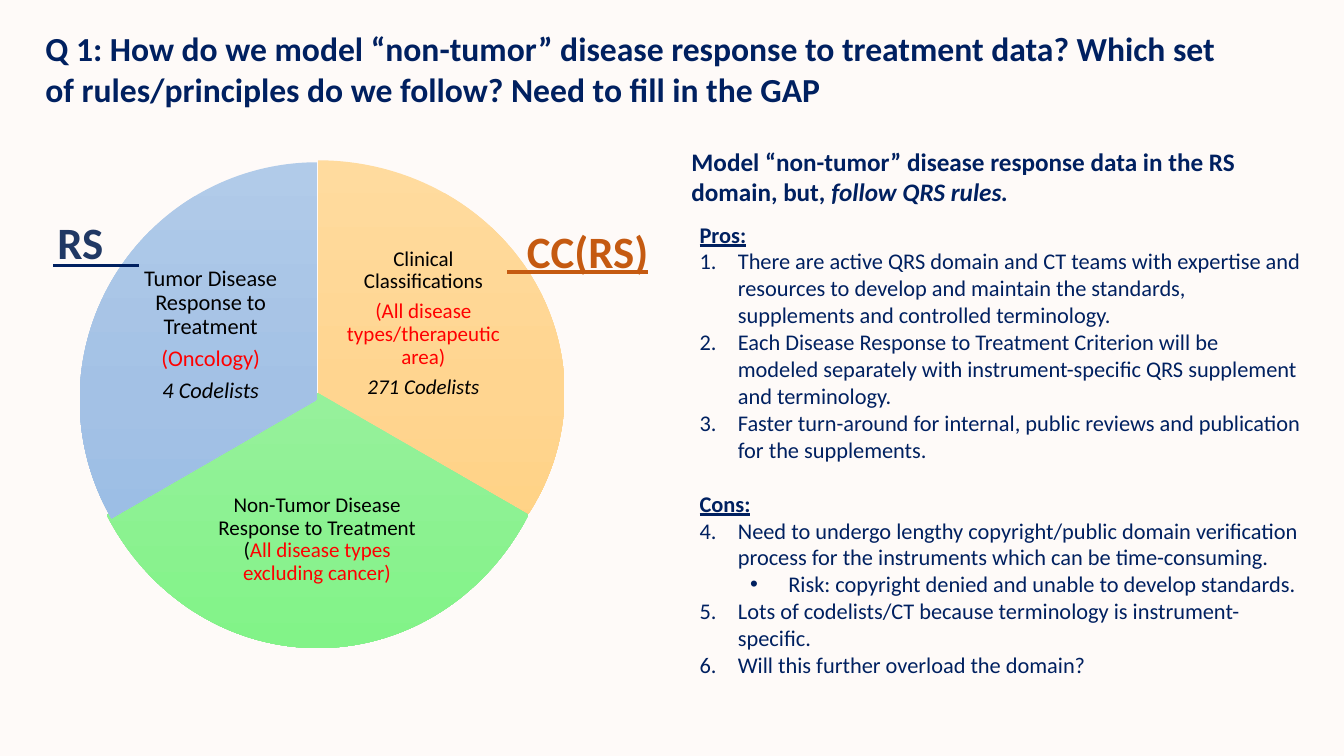
from copy import deepcopy

from lxml import etree
from pptx import Presentation
from pptx.dml.color import RGBColor
from pptx.enum.shapes import MSO_CONNECTOR, MSO_SHAPE
from pptx.enum.text import MSO_ANCHOR, MSO_AUTO_SIZE, PP_ALIGN
from pptx.oxml.ns import qn
from pptx.util import Inches, Pt

PIE, STRAIGHT = MSO_SHAPE.PIE, MSO_CONNECTOR.STRAIGHT
TOP, MIDDLE = MSO_ANCHOR.TOP, MSO_ANCHOR.MIDDLE
LEFT, CENTER, RIGHT = PP_ALIGN.LEFT, PP_ALIGN.CENTER, PP_ALIGN.RIGHT
FONT = "Calibri"
COLORS = {
    "background": "FEFAF8", "navy": "002060", "black": "000000", "red": "FF0000",
    "rs": "203864", "cc": "C55A11",
}

# Content: a paragraph is a list of (text, format) runs
TITLE = ("Q 1: How do we model “non-tumor” disease response to treatment data? "
         "Which set of rules/principles do we follow? Need to fill in the GAP")
SUMMARY = [("Model “non-tumor” disease response data in the RS domain, but, ", {}),
           ("follow QRS rules.", {"italic": True})]
RED, ITALIC = {"color": "red"}, {"italic": True}

# Wedges: box, start and end angle, gradient, label box, label size, label
WEDGES = [
    ((0.71, 1.59, 4.89, 4.61), (270, 30), ("FFDB9E", "FFD590", "FFD07C"),
     (3.37, 2.44, 1.66, 1.54), 15,
     [[("Clinical Classifications", {})],
      [("(All disease types/therapeutic area)", RED)],
      [("271 Codelists", ITALIC)]]),
    ((0.77, 1.37, 4.76, 5.06), (30, 150), ("A4F4A9", "96F19B", "82F388"),
     (2.07, 4.57, 2.15, 1.57), 15,
     [[("Non-Tumor Disease Response to Treatment (", {}),
       ("All disease types excluding cancer)", RED)]]),
    ((0.79, 1.61, 4.71, 4.71), (150, 270), ("B1CBE9", "A3C1E5", "93B9E4"),
     (1.29, 2.54, 1.6, 1.57), 16,
     [[("Tumor Disease Response to Treatment", {})],
      [("(Oncology)", RED)],
      [("4 Codelists", ITALIC)]]),
]

# Domain labels: text, box, alignment, colour, rule (x1, x2, y, colour, width)
DOMAINS = [
    ("CC(RS)", (4.93, 2.17, 1.6, 0.64), RIGHT, "cc", (5.03, 6.43, 2.7, "cc", 3)),
    ("RS", (0.47, 2.08, 0.72, 0.64), LEFT, "rs", (0.53, 1.38, 2.63, "navy", 2.25)),
]

# Arguments: heading, then (level, text)
ARGUMENTS = [
    ("Pros:", [
        (0, "There are active QRS domain and CT teams with expertise and resources to "
            "develop and maintain the standards, supplements and controlled terminology."),
        (0, "Each Disease Response to Treatment Criterion will be modeled separately "
            "with instrument-specific QRS supplement and terminology."),
        (0, "Faster turn-around for internal, public reviews and publication for the "
            "supplements."),
    ]),
    ("Cons:", [
        (0, "Need to undergo lengthy copyright/public domain verification process for "
            "the instruments which can be time-consuming."),
        (1, "Risk: copyright denied and unable to develop standards."),
        (0, "Lots of codelists/CT because terminology is instrument-specific."),
        (0, "Will this further overload the domain?"),
    ]),
]


def rgb(name):
    return RGBColor.from_string(COLORS.get(name, name))


def write(tf, paragraphs, size=16, color="navy", bold=False, italic=False,
          underline=False, align=LEFT, anchor=TOP, inset=None, spacing=None, after=0):
    """Fill a text frame and return its paragraphs."""
    tf.word_wrap = True
    tf.auto_size = MSO_AUTO_SIZE.NONE
    tf.vertical_anchor = anchor
    if inset is not None:
        tf.margin_left = tf.margin_right = tf.margin_top = tf.margin_bottom = Inches(inset)
    for i, runs in enumerate(paragraphs):
        p = tf.paragraphs[0] if i == 0 else tf.add_paragraph()
        p.alignment = align
        p.space_after = Pt(after)
        if spacing:
            p.line_spacing = spacing
        for text, own in runs:
            r = p.add_run()
            r.text = text
            f = r.font
            f.name, f.size = FONT, Pt(size)
            f.bold = own.get("bold", bold)
            f.italic = own.get("italic", italic)
            f.underline = own.get("underline", underline)
            f.color.rgb = rgb(own.get("color", color))
    return tf.paragraphs


def add_text(s, box, paragraphs, **fmt):
    return write(s.shapes.add_textbox(*map(Inches, box)).text_frame, paragraphs, **fmt)


def add_wedge(s, box, angles, gradient):
    sp = s.shapes.add_shape(PIE, *map(Inches, box))
    sp.shadow.inherit = False
    sp.line.fill.background()
    for i, degrees in enumerate(angles):
        sp.adjustments[i] = degrees * 0.6
    sp.fill.gradient()
    stops = sp._element.spPr.find(".//" + qn("a:gsLst"))
    stops.insert(1, deepcopy(stops[0]))
    for i, (stop, color) in enumerate(zip(sp.fill.gradient_stops, gradient)):
        stop.position = i / 2
        stop.color.rgb = rgb(color)
    sp.fill.gradient_angle = 270


def add_rule(s, x1, x2, y, color, width):
    line = s.shapes.add_connector(STRAIGHT, *map(Inches, (x1, y, x2, y)))
    line.line.color.rgb = rgb(color)
    line.line.width = Pt(width)
    etree.SubElement(line._element.spPr, qn("a:effectLst"))


def set_bullet(p, level, start):
    pPr = p._p.get_or_add_pPr()
    pPr.set("marL", str(Inches(0.38 + 0.5 * level)))
    pPr.set("indent", str(-Inches(0.38)))
    if level:
        p.level = level
        etree.SubElement(pPr, qn("a:buFont"), typeface="Arial")
        etree.SubElement(pPr, qn("a:buChar"), char="•")
    else:
        number = etree.SubElement(pPr, qn("a:buAutoNum"), type="arabicPeriod")
        if start > 1:
            number.set("startAt", str(start))


prs = Presentation()
prs.slide_width, prs.slide_height = Inches(13.33), Inches(7.5)
s = prs.slides.add_slide(prs.slide_layouts[5])
s.background.fill.solid()
s.background.fill.fore_color.rgb = rgb("background")

# Title
title = s.shapes.title
title.left, title.top, title.width, title.height = map(Inches, (0.35, 0.23, 11.87, 0.91))
write(title.text_frame, [[(TITLE, {})]], size=24, bold=True)

# Circle of three wedges
for box, angles, gradient, label_box, size, label in WEDGES:
    add_wedge(s, box, angles, gradient)
    add_text(s, label_box, label, size=size, color="black", align=CENTER,
             anchor=MIDDLE, inset=0.02, spacing=0.9, after=0.35 * size)

# Domain labels with their rules
for name, box, align, color, rule in DOMAINS:
    add_text(s, box, [[(name, {})]], size=32, color=color, bold=True, align=align)
    add_rule(s, *rule)

# Pros and cons
rows = []
start = 1
for heading, items in ARGUMENTS:
    rows.append((heading, None, start))
    rows += [(text, level, start) for level, text in items]
    start += sum(level == 0 for level, _ in items)
HEADING = {"bold": True, "underline": True}
paragraphs = add_text(s, (6.84, 2.14, 6.18, 4.68),
                      [[(text, HEADING if level is None else {})] for text, level, _ in rows])
for p, (_, level, start) in zip(paragraphs, rows):
    if level is not None:
        set_bullet(p, level, start)
    elif start > 1:
        p.space_before = Pt(19.5)

# Summary
add_text(s, (6.76, 1.4, 6.1, 0.71), [SUMMARY], size=18, bold=True)

prs.save("out.pptx")
